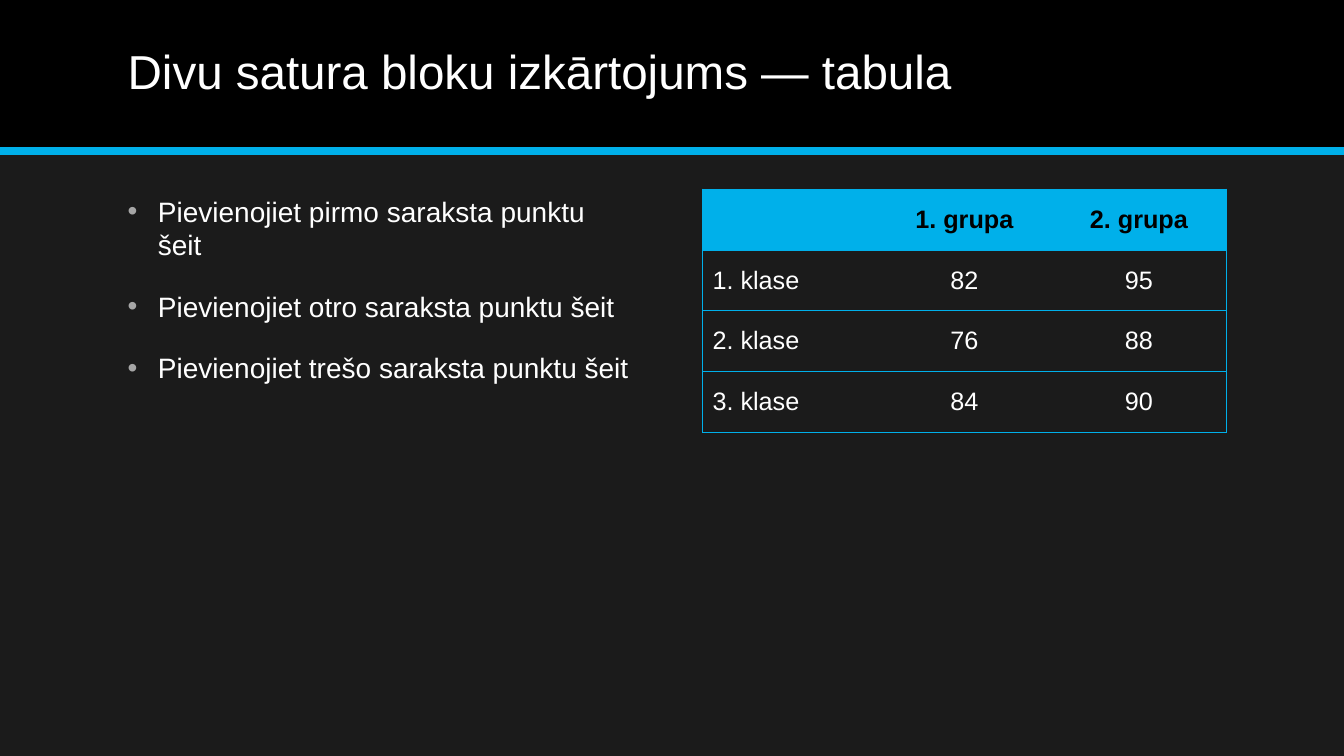
from lxml import etree
from pptx import Presentation
from pptx import util as u
from pptx.dml.color import RGBColor
from pptx.enum import shapes, text
from pptx.oxml.ns import qn

PX = 9525  # EMU per px, 96 px to the inch
WIDTH, HEIGHT = 1280, 720
LEFT, TOP = 112, 180
BLOCK_W = 499
ROW_H = 58

BLACK = RGBColor(0x00, 0x00, 0x00)
WHITE = RGBColor(0xFF, 0xFF, 0xFF)
CHARCOAL = RGBColor(0x1B, 0x1B, 0x1B)
BLUE = RGBColor(0x00, 0xB0, 0xEA)
GREY = RGBColor(0xA6, 0xA6, 0xA6)

TITLE = "Divu satura bloku izkārtojums — tabula"
POINTS = [
    "Pievienojiet pirmo saraksta punktu šeit",
    "Pievienojiet otro saraksta punktu šeit",
    "Pievienojiet trešo saraksta punktu šeit",
]
SCORES = [
    ["", "1. grupa", "2. grupa"],
    ["1. klase", "82", "95"],
    ["2. klase", "76", "88"],
    ["3. klase", "84", "90"],
]
NO_GRID_STYLE = "{2D5ABB26-0587-4C30-8999-92F81FD0307C}"


def px(n):
    return u.Emu(n * PX)


def add_color(parent, color):
    etree.SubElement(parent, qn("a:srgbClr")).set("val", str(color))


class Deck:
    font = "Arial"

    def __init__(self, prs):
        self.slide = prs.slides.add_slide(prs.slide_layouts[1])
        fill = self.slide.background.fill
        fill.solid()
        fill.fore_color.rgb = CHARCOAL

    def send_to_back(self, sp):
        self.slide.shapes._spTree.insert(2, sp._element)

    def band(self, x, y, w, h, color):
        sp = self.slide.shapes.add_shape(
            shapes.MSO_SHAPE.RECTANGLE, px(x), px(y), px(w), px(h))
        sp.shadow.inherit = False
        sp.fill.solid()
        sp.fill.fore_color.rgb = color
        sp.line.fill.background()
        self.send_to_back(sp)

    def rule(self, x1, y1, x2, y2, color, width):
        line = self.slide.shapes.add_connector(
            shapes.MSO_CONNECTOR.STRAIGHT, px(x1), px(y1), px(x2), px(y2))
        line.line.color.rgb = color
        line.line.width = u.Pt(width)
        etree.SubElement(line._element.spPr, qn("a:effectLst"))
        self.send_to_back(line)

    def run(self, p, words, size, color, bold=False):
        r = p.add_run()
        r.text = words
        r.font.name = self.font
        r.font.size = u.Pt(size)
        r.font.bold = bold
        r.font.color.rgb = color

    def place(self, sp, x, y, w, h, anchor):
        sp.left, sp.top, sp.width, sp.height = px(x), px(y), px(w), px(h)
        tf = sp.text_frame
        tf.word_wrap = True
        tf.auto_size = text.MSO_AUTO_SIZE.NONE
        tf.vertical_anchor = anchor
        return tf

    def title(self, words, x, y, w, h):
        tf = self.place(self.slide.shapes.title, x, y, w, h, text.MSO_ANCHOR.MIDDLE)
        p = tf.paragraphs[0]
        p.alignment = text.PP_ALIGN.LEFT
        p.line_spacing = 0.9
        self.run(p, words, 34, WHITE)

    def bullets(self, points, x, y, w, h):
        tf = self.place(self.slide.placeholders[1], x, y, w, h, text.MSO_ANCHOR.TOP)
        for i, point in enumerate(points):
            p = tf.add_paragraph() if i else tf.paragraphs[0]
            p.space_before = u.Pt(20)
            pPr = p._p.get_or_add_pPr()
            pPr.set("marL", str(u.Inches(0.3)))
            pPr.set("indent", str(-u.Inches(0.3)))
            add_color(etree.SubElement(pPr, qn("a:buClr")), GREY)
            etree.SubElement(pPr, qn("a:buFont")).set("typeface", self.font)
            etree.SubElement(pPr, qn("a:buChar")).set("char", "•")
            self.run(p, point, 20, WHITE)

    def borders(self, cell, sides):
        tcPr = cell._tc.get_or_add_tcPr()
        for side in sides:
            ln = etree.SubElement(tcPr, qn("a:ln" + side))
            ln.set("w", str(u.Pt(0.5)))
            add_color(etree.SubElement(ln, qn("a:solidFill")), BLUE)

    def table(self, rows, x, y, w, row_h):
        n_rows, n_cols = len(rows), len(rows[0])
        table = self.slide.shapes.add_table(
            n_rows, n_cols, px(x), px(y), px(w), px(row_h * n_rows)).table
        table._tbl.tblPr.find(qn("a:tableStyleId")).text = NO_GRID_STYLE
        for i, row in enumerate(rows):
            for j, words in enumerate(row):
                cell = table.cell(i, j)
                cell.vertical_anchor = text.MSO_ANCHOR.MIDDLE
                # Outer frame and row lines, no inner verticals
                self.borders(cell, "L" * (j == 0) + "R" * (j == n_cols - 1) + "TB")
                if i == 0:
                    cell.fill.solid()
                    cell.fill.fore_color.rgb = BLUE
                else:
                    cell.fill.background()
                p = cell.text_frame.paragraphs[0]
                p.alignment = text.PP_ALIGN.CENTER if j else text.PP_ALIGN.LEFT
                if words:
                    self.run(p, words, 18, WHITE if i else BLACK, bold=i == 0)


def main():
    prs = Presentation()
    prs.slide_width, prs.slide_height = px(WIDTH), px(HEIGHT)
    deck = Deck(prs)

    # Header: the rule lies over the band, both behind the title
    deck.rule(0, 144, WIDTH, 144, BLUE, 6)
    deck.band(0, 0, WIDTH, 144, BLACK)
    deck.title(TITLE, LEFT, 13, 1056, 115)

    # Two content blocks
    deck.bullets(POINTS, LEFT, TOP, BLOCK_W, 468)
    deck.table(SCORES, WIDTH - LEFT - BLOCK_W, TOP, BLOCK_W, ROW_H)

    prs.save("out.pptx")


if __name__ == "__main__":
    main()
